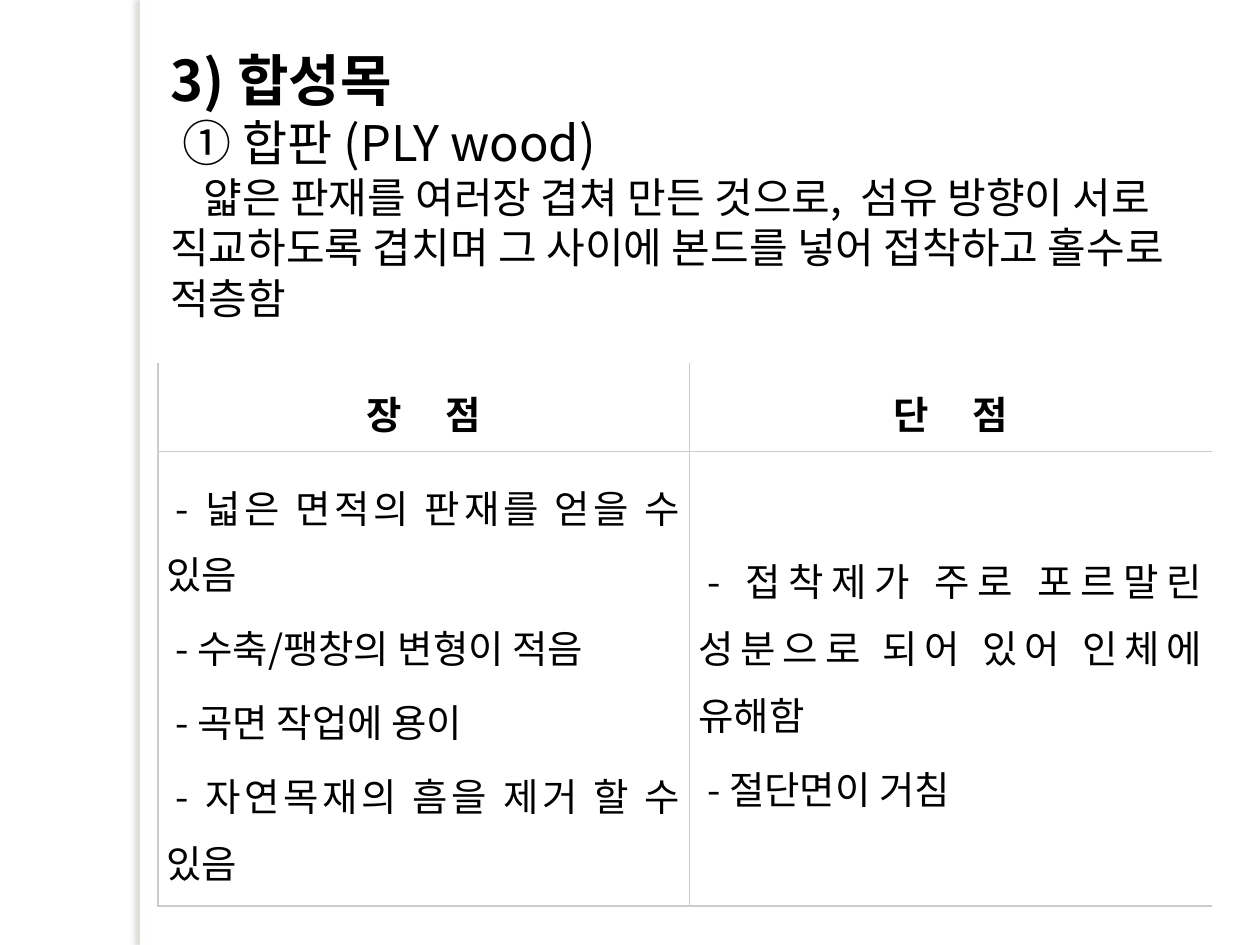
from lxml.etree import SubElement
from pptx import Presentation
from pptx.dml.color import RGBColor
from pptx.enum.shapes import MSO_SHAPE as Preset
from pptx.enum.text import MSO_ANCHOR as Anchor, MSO_AUTO_SIZE as AutoSize, PP_ALIGN as Align
from pptx.oxml.ns import qn
from pptx.util import Cm, Pt

THEME = {
    "font": "Noto Sans CJK KR",
    "text": "000000", "paper": "FFFFFF", "rule": "CCCCCC", "shade": "736F63",
    "heading": 32, "subheading": 28, "body": 24, "cell": 22,
    "thick": 1.13, "thin": 0.25,
}

INTRO = [
    ("3) 합성목", "heading", True, 0),
    ("① 합판 (PLY wood)", "subheading", False, 0.25),
    ("얇은 판재를 여러장 겹쳐 만든 것으로,  섬유 방향이 서로 직교하도록 겹치며 "
     "그 사이에 본드를 넣어 접착하고 홀수로 적층함", "body", False, 0.67),
]
COMPARISON = [
    (["장     점"], ["단     점"]),
    (["- 넓은 면적의 판재를 얻을 수 있음", "- 수축/팽창의 변형이 적음",
      "- 곡면 작업에 용이", "- 자연목재의 흠을 제거 할 수 있음"],
     ["- 접착제가 주로 포르말린 성분으로 되어 있어 인체에 유해함", "- 절단면이 거침"]),
]
COLUMN_WIDTHS = (10.72, 10.52)
ROW_HEIGHTS = (1.75, 9.17)
LEFT = 3.18

INTRO_FORMAT = {"alignment": Align.LEFT, "line_spacing": 1.0, "space_before": Pt(0)}
HEADER_FORMAT = {"alignment": Align.CENTER, "line_spacing": 1.2, "space_after": Pt(4)}
POINT_FORMAT = {**HEADER_FORMAT, "alignment": Align.JUSTIFY}
CELL_FORMAT = {
    "vertical_anchor": Anchor.MIDDLE,
    "margin_left": Cm(0.18), "margin_right": Cm(0.18),
    "margin_top": Cm(0.05), "margin_bottom": Cm(0.05),
}


def apply(target, formats):
    for name, value in formats.items():
        setattr(target, name, value)


def write(frame, lines, formats):
    for index, (wording, size, bold, indent) in enumerate(lines):
        paragraph = frame.add_paragraph() if index else frame.paragraphs[0]
        apply(paragraph, formats)
        properties = paragraph._p.get_or_add_pPr()
        properties.set("marL", "0")
        properties.set("indent", str(Cm(indent)))
        run = paragraph.add_run()
        run.text = wording
        apply(run.font, {"name": THEME["font"], "size": Pt(THEME[size]), "bold": bold})
        run.font.color.rgb = RGBColor.from_string(THEME["text"])
        SubElement(run._r.get_or_add_rPr(), qn("a:ea"), typeface=THEME["font"])


def add_border(cell, side, weight):
    line = SubElement(cell._tc.get_or_add_tcPr(), qn(f"a:ln{side}"), w=str(Pt(THEME[weight])))
    SubElement(SubElement(line, qn("a:solidFill")), qn("a:srgbClr"), val=THEME["rule"])


def add_edge(slide, height):
    edge = slide.shapes.add_shape(Preset.RECTANGLE, Cm(2.82), 0, Cm(0.2), height)
    edge.fill.solid()
    edge.fill.fore_color.rgb = RGBColor.from_string(THEME["paper"])
    edge.line.fill.background()
    edge.shadow.inherit = False
    effects = edge._element.spPr.find(qn("a:effectLst"))
    shadow = SubElement(effects, qn("a:outerShdw"), blurRad=str(Pt(3)), dist=str(Pt(3)),
                        dir=str(180 * 60000), algn="tl", rotWithShape="0")
    shade = SubElement(shadow, qn("a:srgbClr"), val=THEME["shade"])
    SubElement(shade, qn("a:alpha"), val="25000")


def add_intro(slide):
    intro = slide.shapes.title
    apply(intro, {"left": Cm(LEFT), "top": Cm(0.79), "width": Cm(21.44), "height": Cm(5.89)})
    apply(intro.text_frame, {"word_wrap": True, "vertical_anchor": Anchor.TOP,
                             "auto_size": AutoSize.SHAPE_TO_FIT_TEXT})
    write(intro.text_frame, INTRO, INTRO_FORMAT)


def add_comparison(slide):
    table = slide.shapes.add_table(
        len(COMPARISON), len(COLUMN_WIDTHS), Cm(LEFT), Cm(7.34),
        Cm(sum(COLUMN_WIDTHS)), Cm(sum(ROW_HEIGHTS))).table
    apply(table, {"first_row": False, "horz_banding": False})
    for column, width in zip(table.columns, COLUMN_WIDTHS):
        column.width = Cm(width)
    for row, height in zip(table.rows, ROW_HEIGHTS):
        row.height = Cm(height)
    for r, points_by_column in enumerate(COMPARISON):
        header = r == 0
        for c, points in enumerate(points_by_column):
            cell = table.cell(r, c)
            apply(cell, CELL_FORMAT)
            add_border(cell, "L", "thick")
            if c == 0:
                add_border(cell, "R", "thick")
            if not header:
                add_border(cell, "T", "thin")
            add_border(cell, "B", "thin" if header else "thick")
            cell.fill.background()
            indent = 0 if header else 0.18
            write(cell.text_frame, [(point, "cell", header, indent) for point in points],
                  HEADER_FORMAT if header else POINT_FORMAT)


def main():
    deck = Presentation()
    apply(deck, {"slide_width": Cm(25.4), "slide_height": Cm(19.05)})
    slide = deck.slides.add_slide(deck.slide_layouts[5])
    add_edge(slide, deck.slide_height)
    add_intro(slide)
    add_comparison(slide)
    deck.save("out.pptx")


if __name__ == "__main__":
    main()
